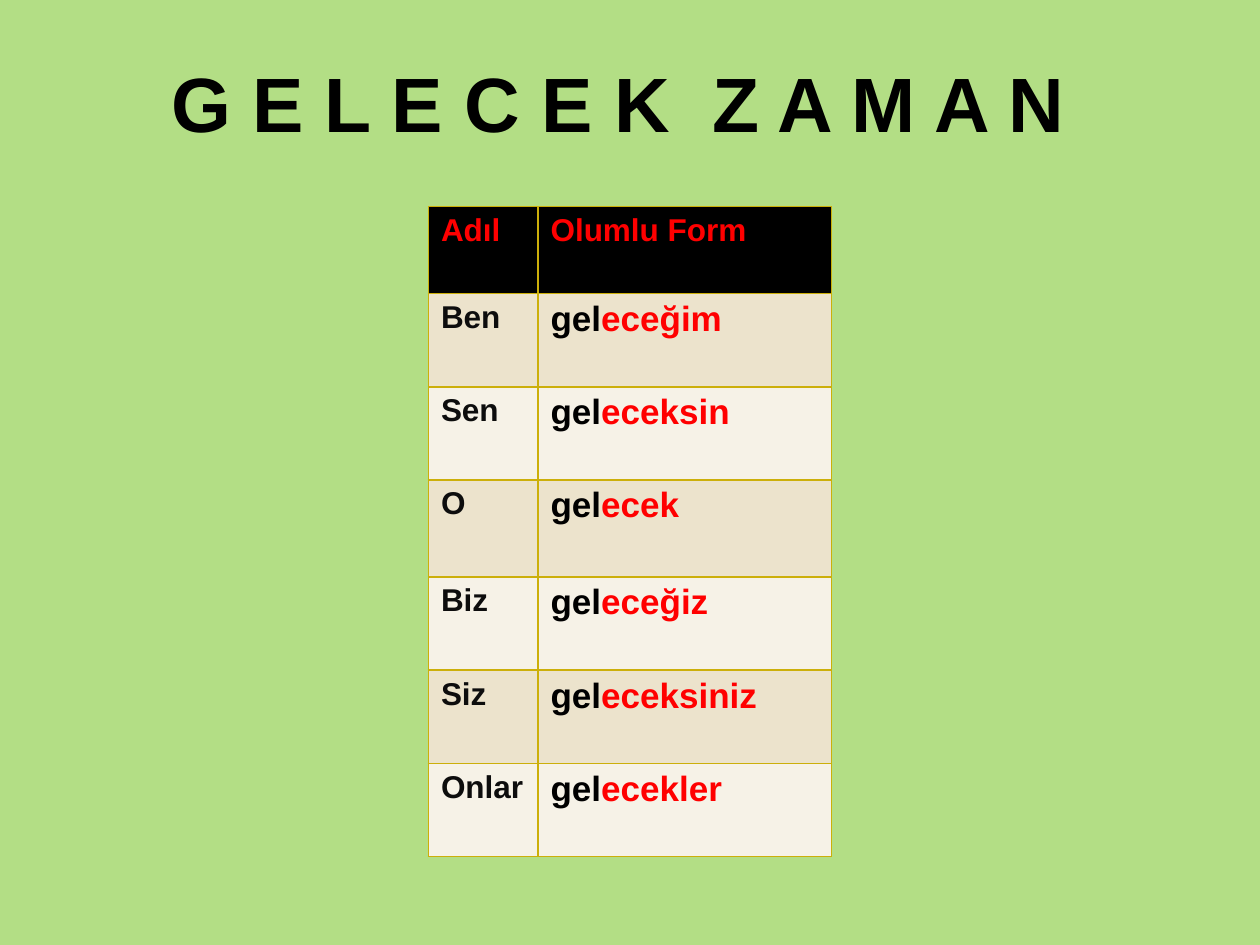
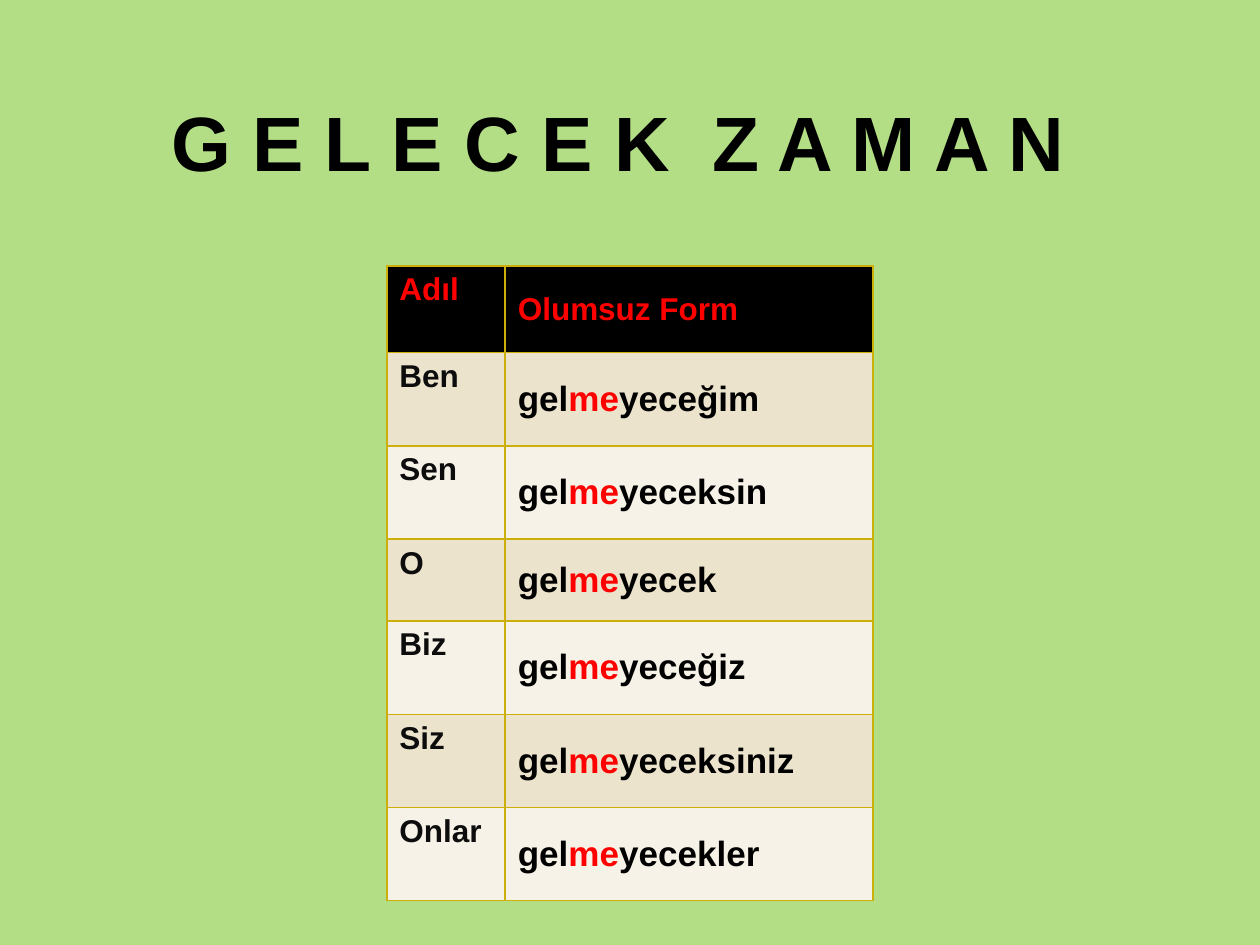
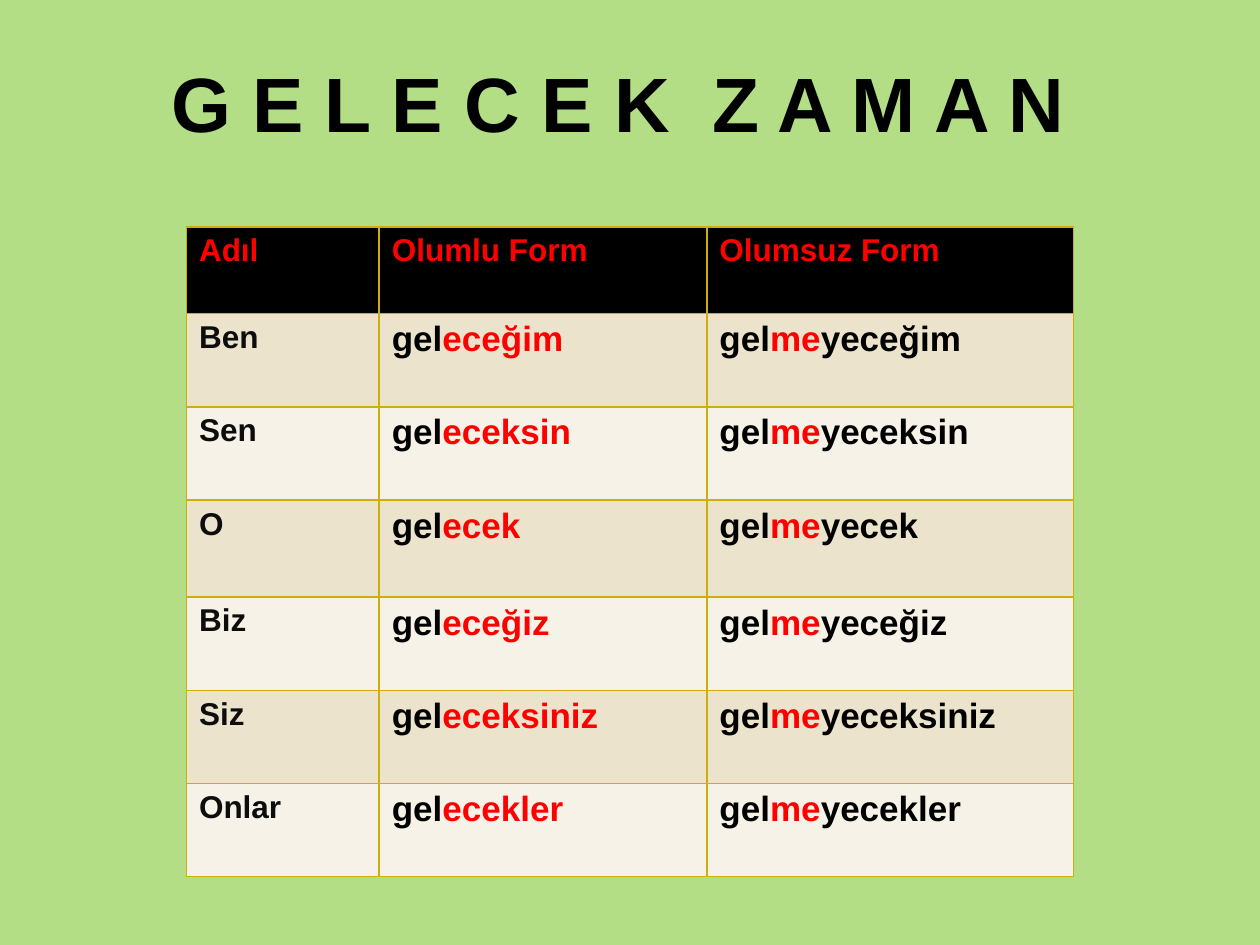
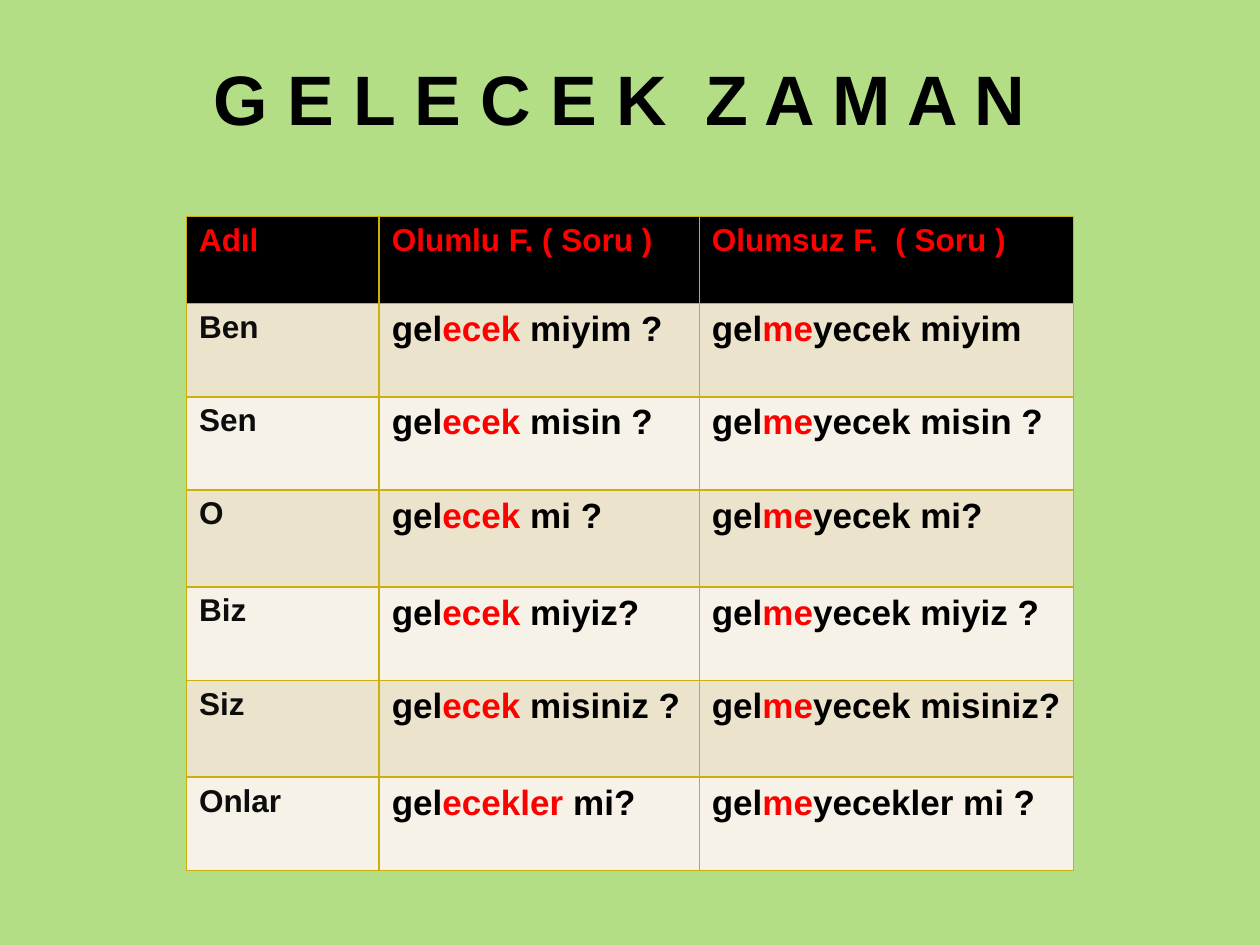
from dataclasses import dataclass

from lxml import etree
from pptx import Presentation
from pptx.dml.color import RGBColor
from pptx.enum.text import MSO_ANCHOR, MSO_AUTO_SIZE, PP_ALIGN
from pptx.oxml.ns import qn
from pptx.util import Pt

TOP = MSO_ANCHOR.TOP
MIDDLE = MSO_ANCHOR.MIDDLE
CENTER = PP_ALIGN.CENTER
GROW = MSO_AUTO_SIZE.SHAPE_TO_FIT_TEXT

PX = 9144
PAGE_WIDTH, PAGE_HEIGHT = 1000, 750
TITLE_ONLY = 5
FONT = "Arial"
TITLE = "G E L E C E K  Z A M A N "
LABEL_SIZE, VERB_SIZE = 18, 20

GREEN = RGBColor(0xB3, 0xDE, 0x85)
BLACK = RGBColor(0x00, 0x00, 0x00)
RED = RGBColor(0xFF, 0x00, 0x00)
CHARCOAL = RGBColor(0x0D, 0x0D, 0x0D)
GOLD = RGBColor(0xCC, 0xAF, 0x0A)
SAND = RGBColor(0xEC, 0xE3, 0xCC)
CREAM = RGBColor(0xF6, 0xF2, 0xE7)

PRONOUNS = ["Ben", "Sen", "O", "Biz", "Siz", "Onlar"]
ENDINGS = ["eceğim", "eceksin", "ecek", "eceğiz", "eceksiniz", "ecekler"]
AFFIRMATIVE = [f"gel*{ending}*" for ending in ENDINGS]
NEGATIVE = [f"gel*me*y{ending}" for ending in ENDINGS]
ASKING = [
    "gel*ecek *miyim ?",
    "gel*ecek *misin ?",
    "gel*ecek *mi ?",
    "gel*ecek *miyiz?",
    "gel*ecek *misiniz ?",
    "gel*ecekler *mi?",
]
ASKING_NEGATIVE = [
    "gel*me*yecek miyim",
    "gel*me*yecek misin ?",
    "gel*me*yecek mi?",
    "gel*me*yecek miyiz ?",
    "gel*me*yecek misiniz?",
    "gel*me*yecekler mi ?",
]


@dataclass(frozen=True)
class Column:
    heading: str
    entries: list[str]
    width: int
    anchor: MSO_ANCHOR = TOP


@dataclass(frozen=True)
class Lesson:
    left: int
    top: int
    columns: list[Column]
    rows: tuple[int, ...] = (69, 74, 74, 77, 74, 74, 74)
    title_top: int = 39
    title_height: int = 84
    title_size: int = 44
    title_anchor: MSO_ANCHOR = TOP


LESSONS = [
    Lesson(340, 164, [
        Column("Adıl", PRONOUNS, 87),
        Column("Olumlu Form", AFFIRMATIVE, 233),
    ]),
    Lesson(307, 211, [
        Column("Adıl", PRONOUNS, 94),
        Column("Olumsuz Form", NEGATIVE, 292, MIDDLE),
    ], rows=(69, 74, 74, 65, 74, 74, 74), title_top=70, title_anchor=MIDDLE),
    Lesson(148, 180, [
        Column("Adıl", PRONOUNS, 153),
        Column("Olumlu Form", AFFIRMATIVE, 260),
        Column("Olumsuz Form", NEGATIVE, 291),
    ]),
    Lesson(148, 172, [
        Column("Adıl", PRONOUNS, 153),
        Column("Olumlu F. ( Soru )", ASKING, 254),
        Column("Olumsuz F.  ( Soru )", ASKING_NEGATIVE, 297),
    ], rows=(69, 74, 74, 77, 74, 77, 74), title_height=77, title_size=40),
]


def place_title(page, lesson: Lesson) -> None:
    box = page.shapes.title
    box.left, box.top = 113 * PX, lesson.title_top * PX
    box.width, box.height = 773 * PX, lesson.title_height * PX
    frame = box.text_frame
    frame.text = TITLE
    frame.word_wrap = True
    frame.auto_size = GROW
    frame.vertical_anchor = lesson.title_anchor
    para = frame.paragraphs[0]
    para.alignment = CENTER
    para.font.name = FONT
    para.font.size = Pt(lesson.title_size)
    para.font.bold = True
    para.font.color.rgb = BLACK


def outline_cell(cell) -> None:
    properties = cell._tc.get_or_add_tcPr()
    for side in ("a:lnL", "a:lnR", "a:lnT", "a:lnB"):
        line = etree.SubElement(properties, qn(side), w=str(Pt(1)))
        fill = etree.SubElement(line, qn("a:solidFill"))
        etree.SubElement(fill, qn("a:srgbClr"), val=str(GOLD))


def fill_cell(cell, text: str, size: int, color: RGBColor,
              background: RGBColor, anchor: MSO_ANCHOR) -> None:
    outline_cell(cell)
    cell.fill.solid()
    cell.fill.fore_color.rgb = background
    cell.vertical_anchor = anchor
    para = cell.text_frame.paragraphs[0]
    para.font.name = FONT
    para.font.size = Pt(size)
    para.font.bold = True
    for index, part in enumerate(text.split("*")):
        if part:
            span = para.add_run()
            span.text = part
            span.font.color.rgb = RED if index % 2 else color


def draw_table(page, lesson: Lesson) -> None:
    width = sum(column.width for column in lesson.columns)
    table = page.shapes.add_table(
        len(lesson.rows), len(lesson.columns), lesson.left * PX,
        lesson.top * PX, width * PX, sum(lesson.rows) * PX).table
    table.first_row = False
    table.horz_banding = False
    for row, height in zip(table.rows, lesson.rows):
        row.height = height * PX
    for column_index, column in enumerate(lesson.columns):
        table.columns[column_index].width = column.width * PX
        fill_cell(table.cell(0, column_index), column.heading, LABEL_SIZE,
                  RED, BLACK, column.anchor)
        size, color = (VERB_SIZE, BLACK) if column_index else (LABEL_SIZE, CHARCOAL)
        for row_index, entry in enumerate(column.entries, start=1):
            band = SAND if row_index % 2 else CREAM
            fill_cell(table.cell(row_index, column_index), entry, size,
                      color, band, column.anchor)


def main() -> None:
    deck = Presentation()
    deck.slide_width, deck.slide_height = PAGE_WIDTH * PX, PAGE_HEIGHT * PX
    background = deck.slide_master.background.fill
    background.solid()
    background.fore_color.rgb = GREEN
    for lesson in LESSONS:
        page = deck.slides.add_slide(deck.slide_layouts[TITLE_ONLY])
        place_title(page, lesson)
        draw_table(page, lesson)
    deck.save("out.pptx")


if __name__ == "__main__":
    main()
